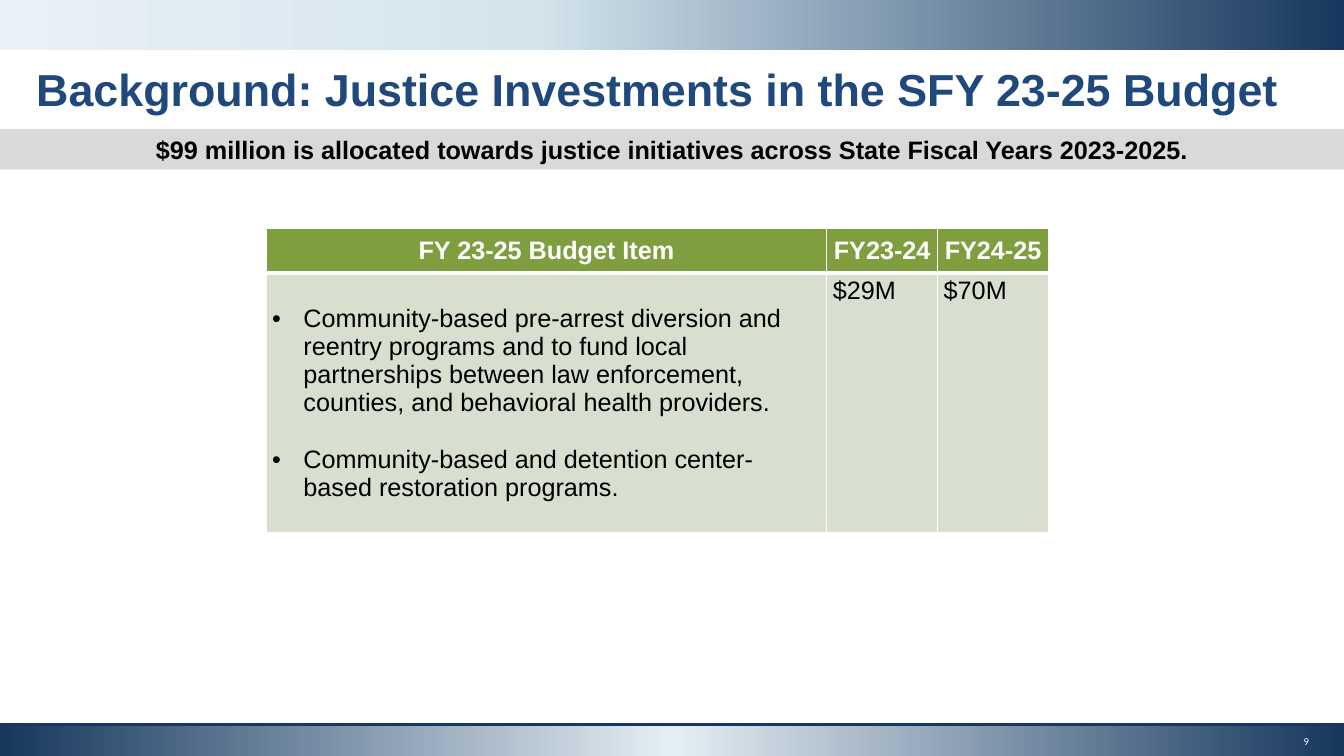
from pptx import Presentation, util as u
from pptx.dml.color import RGBColor
from pptx.enum import shapes, text
from pptx.oxml.xmlchemy import OxmlElement

Inches, Pt = u.Inches, u.Pt
W, H = 13.33, 7.5
NAVY, WHITE, BLACK = "17375E", "FFFFFF", "000000"
BANDS = [
    (0, 0.5, [(0, NAVY), (60, "D3E4ED"), (100, "E9F1F6")]),
    (7.2, 0.3, [(0, NAVY), (50, "E4EEF4"), (100, NAVY)]),
]
TITLE = "Background: Justice Investments in the SFY 23-25 Budget"
SUMMARY = "$99 million is allocated towards justice initiatives across State Fiscal Years 2023-2025."
HEADER = ["FY 23-25 Budget Item", "FY23-24", "FY24-25"]
ITEMS = [
    "Community-based pre-arrest diversion and reentry programs and to fund local "
    "partnerships between law enforcement, counties, and behavioral health providers.",
    "Community-based and detention center-based restoration programs.",
]
ROWS = [[[h] for h in HEADER], [ITEMS, ["$29M"], ["$70M"]]]
COL_WIDTHS = [5.56, 1.1, 1.1]
ROW_HEIGHTS = [0.44, 2.57]
ROW_FILLS = ["7F9E3F", "D8DFCF"]
LINE_GAP = 0.28


def color(value):
    return RGBColor.from_string(value)


def element(tag, parent=None, **attrs):
    el = OxmlElement(tag)
    for name, value in attrs.items():
        el.set(name, str(value))
    if parent is not None:
        parent.append(el)
    return el


def style(p, size, hue, bold=False, align=text.PP_ALIGN.CENTER, font="Arial"):
    p.alignment = align
    p.font.name, p.font.size, p.font.bold = font, Pt(size), bold
    p.font.color.rgb = color(hue)


def add_rect(s, top, height):
    sp = s.shapes.add_shape(shapes.MSO_SHAPE.RECTANGLE, 0, Inches(top), Inches(W), Inches(height))
    sp.shadow.inherit = False
    sp.line.fill.background()
    return sp


def add_band(s, top, height, stops):
    sp = add_rect(s, top, height)
    sp.fill.gradient()
    sp.fill.gradient_angle = 180
    stop_list = sp.fill.gradient_stops[0]._gs.getparent()
    for old in list(stop_list):
        stop_list.remove(old)
    for pos, hue in stops:
        gs = element("a:gs", stop_list, pos=pos * 1000)
        element("a:srgbClr", gs, val=hue)


def add_text(s, left, top, width, height, words):
    tf = s.shapes.add_textbox(Inches(left), Inches(top), Inches(width), Inches(height)).text_frame
    tf.word_wrap = True
    tf.text = words
    return tf


def set_borders(cell, top, bottom):
    pr = cell._tc.get_or_add_tcPr()
    widths = [("L", 1), ("R", 1), ("T", top), ("B", bottom)]
    for i, (side, width) in enumerate(widths):
        ln = element("a:ln" + side, w=Pt(width))
        fill = element("a:solidFill", ln)
        element("a:srgbClr", fill, val=WHITE)
        pr.insert(i, ln)


def set_bullet(p):
    pr = p._p.get_or_add_pPr()
    pr.set("marL", str(Inches(0.31)))
    pr.set("indent", str(-Inches(0.31)))
    element("a:buFont", pr, typeface="Arial")
    element("a:buChar", pr, char="•")


def fill_cell(cell, lines, row):
    is_header = row == 0
    is_list = len(lines) > 1
    cell.margin_left = cell.margin_right = Inches(0.06)
    cell.margin_top = Inches(0.03 + LINE_GAP * is_list)
    cell.margin_bottom = Inches(0.03)
    cell.vertical_anchor = text.MSO_ANCHOR.MIDDLE if is_header else text.MSO_ANCHOR.TOP
    cell.fill.solid()
    cell.fill.fore_color.rgb = color(ROW_FILLS[row])
    set_borders(cell, *((1, 3) if is_header else (3, 1)))
    tf = cell.text_frame
    tf.text = "\n".join(lines)
    for i, p in enumerate(tf.paragraphs):
        if is_header:
            style(p, 18, WHITE, True)
        else:
            style(p, 18, BLACK, align=text.PP_ALIGN.LEFT)
        if i:
            p.space_before = Inches(LINE_GAP)
        if is_list:
            set_bullet(p)


def add_budget_table(s):
    tbl = s.shapes.add_table(len(ROWS), len(HEADER), Inches(2.64), Inches(2.27),
                             Inches(sum(COL_WIDTHS)), Inches(sum(ROW_HEIGHTS))).table
    for col, width in zip(tbl.columns, COL_WIDTHS):
        col.width = Inches(width)
    for r, cells in enumerate(ROWS):
        tbl.rows[r].height = Inches(ROW_HEIGHTS[r])
        for c, lines in enumerate(cells):
            fill_cell(tbl.cell(r, c), lines, r)


def main():
    prs = Presentation()
    prs.slide_width, prs.slide_height = Inches(W), Inches(H)
    s = prs.slides.add_slide(prs.slide_layouts[6])

    for band in BANDS:
        add_band(s, *band)
    rule = s.shapes.add_connector(shapes.MSO_CONNECTOR.STRAIGHT, 0, Inches(7.19), Inches(W), Inches(7.19))
    rule.line.color.rgb = color(NAVY)
    rule.line.width = Pt(1.75)
    element("a:effectLst", rule._element.spPr)

    add_budget_table(s)

    p = add_text(s, 0.16, 0.62, 12.73, 0.6, TITLE).paragraphs[0]
    style(p, 32, "1F497D", True)
    p.line_spacing = 0.9

    bar = add_rect(s, 1.28, 0.4)
    bar.fill.solid()
    bar.fill.fore_color.rgb = color("D9D9D9")
    bar.text_frame.word_wrap = True
    bar.text_frame.text = SUMMARY
    style(bar.text_frame.paragraphs[0], 18, BLACK, True)

    tf = add_text(s, 12.82, 7.28, 0.27, 0.15, "9")
    tf.margin_left = tf.margin_right = 0
    tf.margin_top = tf.margin_bottom = Inches(0.01)
    tf.vertical_anchor = text.MSO_ANCHOR.MIDDLE
    style(tf.paragraphs[0], 7.5, WHITE, font="Calibri")

    prs.save("out.pptx")


if __name__ == "__main__":
    main()
